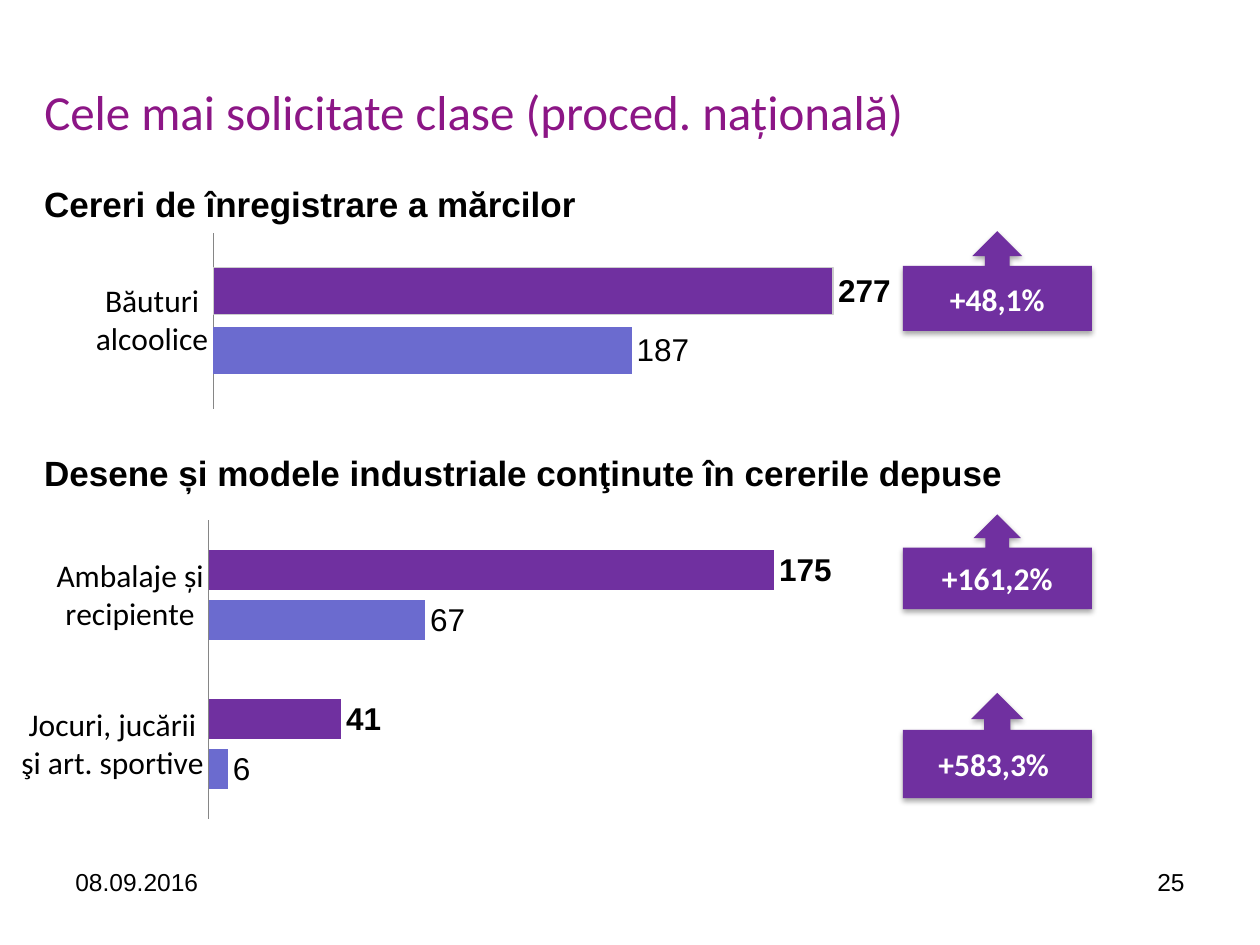
import dataclasses

import lxml.etree
import pptx
import pptx.chart.data
import pptx.dml.color
import pptx.enum.chart
import pptx.enum.shapes
import pptx.enum.text
import pptx.oxml
import pptx.oxml.ns
import pptx.util

Cm = pptx.util.Cm
ALIGN = pptx.enum.text.PP_ALIGN
ANCHOR = pptx.enum.text.MSO_ANCHOR


def rgb(value):
    return pptx.dml.color.RGBColor.from_string(value)


@dataclasses.dataclass(frozen=True)
class Theme:
    body_font: str = "Arial"
    label_font: str = "Calibri"
    text: str = "000000"
    title: str = "8C1686"
    previous: str = "6B6BCF"
    current: str = "7030A0"
    bar_outline: str = "CCCCCC"
    axis: str = "868686"
    on_callout: str = "FFFFFF"
    title_size: int = 28
    heading_size: int = 20
    label_size: int = 18
    footer_size: int = 14


class SlideBuilder:
    def __init__(self, slide, theme):
        self.slide = slide
        self.theme = theme

    def format_font(self, font, size, name, color, bold=False):
        font.size = pptx.util.Pt(size)
        font.name = name
        font.bold = bold
        font.color.rgb = rgb(color)

    def set_text(self, frame, text, size, name, color, bold=False, align=ALIGN.LEFT):
        frame.text = text
        paragraph = frame.paragraphs[0]
        paragraph.alignment = align
        self.format_font(paragraph.runs[0].font, size, name, color, bold)

    def title(self, text, left, top, width, height):
        title = self.slide.shapes.title
        title.left, title.top, title.width, title.height = left, top, width, height
        title.text_frame.vertical_anchor = ANCHOR.MIDDLE
        self.set_text(title.text_frame, text, self.theme.title_size,
                      self.theme.label_font, self.theme.title)

    def text(self, text, left, top, width, height, size, bold=False, align=ALIGN.LEFT):
        frame = self.slide.shapes.add_textbox(left, top, width, height).text_frame
        frame.word_wrap = True
        self.set_text(frame, text, size, self.theme.body_font, self.theme.text, bold, align)

    def heading(self, text, top):
        self.text(text, Cm(0.64), top, Cm(21.16), Cm(1.12), self.theme.heading_size, True)

    def footer(self, text, left, align):
        self.text(text, left, Cm(17.36), Cm(5.93), Cm(1.32),
                  self.theme.footer_size, align=align)

    def callout(self, text, top, height):
        callout = self.slide.shapes.add_shape(
            pptx.enum.shapes.MSO_SHAPE.UP_ARROW_CALLOUT, Cm(18.2), top, Cm(3.81), height)
        callout.fill.solid()
        callout.fill.fore_color.rgb = rgb(self.theme.current)
        callout.line.fill.background()
        self.soft_shadow(callout)
        callout.text_frame.vertical_anchor = ANCHOR.MIDDLE
        self.set_text(callout.text_frame, text, self.theme.label_size,
                      self.theme.label_font, self.theme.on_callout, True, ALIGN.CENTER)

    def soft_shadow(self, shape):
        """Drop a blurred shadow straight down, at 35 % opacity."""
        shape.shadow.inherit = False
        effects = shape._element.spPr.find(pptx.oxml.ns.qn("a:effectLst"))
        effects.append(pptx.oxml.parse_xml(
            f'<a:outerShdw {pptx.oxml.ns.nsdecls("a")} blurRad="40000" dist="23000" '
            'dir="5400000" rotWithShape="0"><a:srgbClr val="000000">'
            '<a:alpha val="35000"/></a:srgbClr></a:outerShdw>'))

    def bar_chart(self, categories, previous, current, maximum, box, plot_area, outlined=False):
        data = pptx.chart.data.CategoryChartData()
        data.categories = categories
        data.add_series("Series 1", previous)
        data.add_series("Series 2", current)
        chart = self.slide.shapes.add_chart(
            pptx.enum.chart.XL_CHART_TYPE.BAR_CLUSTERED, *box, data).chart
        theme = self.theme
        chart.has_legend = False
        chart.has_title = False
        self.format_font(chart.font, theme.label_size, theme.body_font, theme.text)

        axis = chart.category_axis
        axis.major_tick_mark = pptx.enum.chart.XL_TICK_MARK.NONE
        axis.format.line.color.rgb = rgb(theme.axis)
        self.format_font(axis.tick_labels.font, theme.label_size, theme.label_font, theme.text)
        scale = chart.value_axis
        scale.visible = False
        scale.has_major_gridlines = False
        scale.minimum_scale, scale.maximum_scale = 0, maximum

        plot = chart.plots[0]
        plot.vary_by_categories = False
        plot.gap_width, plot.overlap = 150, -25
        for series, color, bold in zip(plot.series, (theme.previous, theme.current),
                                       (False, True)):
            series.format.fill.solid()
            series.format.fill.fore_color.rgb = rgb(color)
            labels = series.data_labels
            labels.show_value = True
            labels.position = pptx.enum.chart.XL_LABEL_POSITION.OUTSIDE_END
            self.format_font(labels.font, theme.label_size, theme.body_font, theme.text, bold)
        if outlined:
            outline = plot.series[1].format.line
            outline.color.rgb = rgb(theme.bar_outline)
            outline.width = pptx.util.Pt(0.75)
        self.place_plot(chart, plot_area)

    def place_plot(self, chart, plot_area):
        """Fix the inner plot area, given as fractions x, y, w, h of the chart."""
        qn = pptx.oxml.ns.qn
        area = chart._chartSpace.chart.plotArea
        for old in area.findall(qn("c:layout")):
            area.remove(old)
        layout = lxml.etree.Element(qn("c:layout"))
        manual = lxml.etree.SubElement(layout, qn("c:manualLayout"))
        settings = [("layoutTarget", "inner"), ("xMode", "edge"), ("yMode", "edge")]
        for tag, value in settings + list(zip("xywh", plot_area)):
            lxml.etree.SubElement(manual, qn(f"c:{tag}")).set("val", str(value))
        area.insert(0, layout)


def main():
    presentation = pptx.Presentation()
    presentation.slide_width, presentation.slide_height = Cm(25.4), Cm(19.05)
    slide = presentation.slides.add_slide(presentation.slide_layouts[5])
    builder = SlideBuilder(slide, Theme())

    builder.title("Cele mai solicitate clase (proced. națională)",
                  Cm(0.64), Cm(0.64), Cm(20.75), Cm(3.18))
    builder.bar_chart(["Băuturi alcoolice"], [187], [277], 300,
                      (Cm(0.43), Cm(4.24), Cm(17.58), Cm(4.5)),
                      (0.22, 0.1, 0.77, 0.79), outlined=True)
    builder.bar_chart(["Jocuri, jucării şi art. sportive", "Ambalaje și recipiente"],
                      [6, 67], [41, 175], 200,
                      (Cm(0.43), Cm(9.73), Cm(17.15), Cm(7.62)),
                      (0.22, 0.1, 0.76, 0.79))
    builder.heading("Сereri de înregistrare a mărcilor", Cm(3.56))
    builder.heading("Desene și modele industriale conţinute în cererile depuse", Cm(8.97))
    for change, top, height in (("+48,1%", 4.66, 2.01),
                                ("+161,2%", 10.37, 1.91),
                                ("+583,3% ", 13.97, 2.12)):
        builder.callout(change, Cm(top), Cm(height))
    builder.footer("08.09.2016", Cm(1.27), ALIGN.LEFT)
    builder.footer("25", Cm(18.2), ALIGN.RIGHT)

    presentation.save("out.pptx")


if __name__ == "__main__":
    main()
